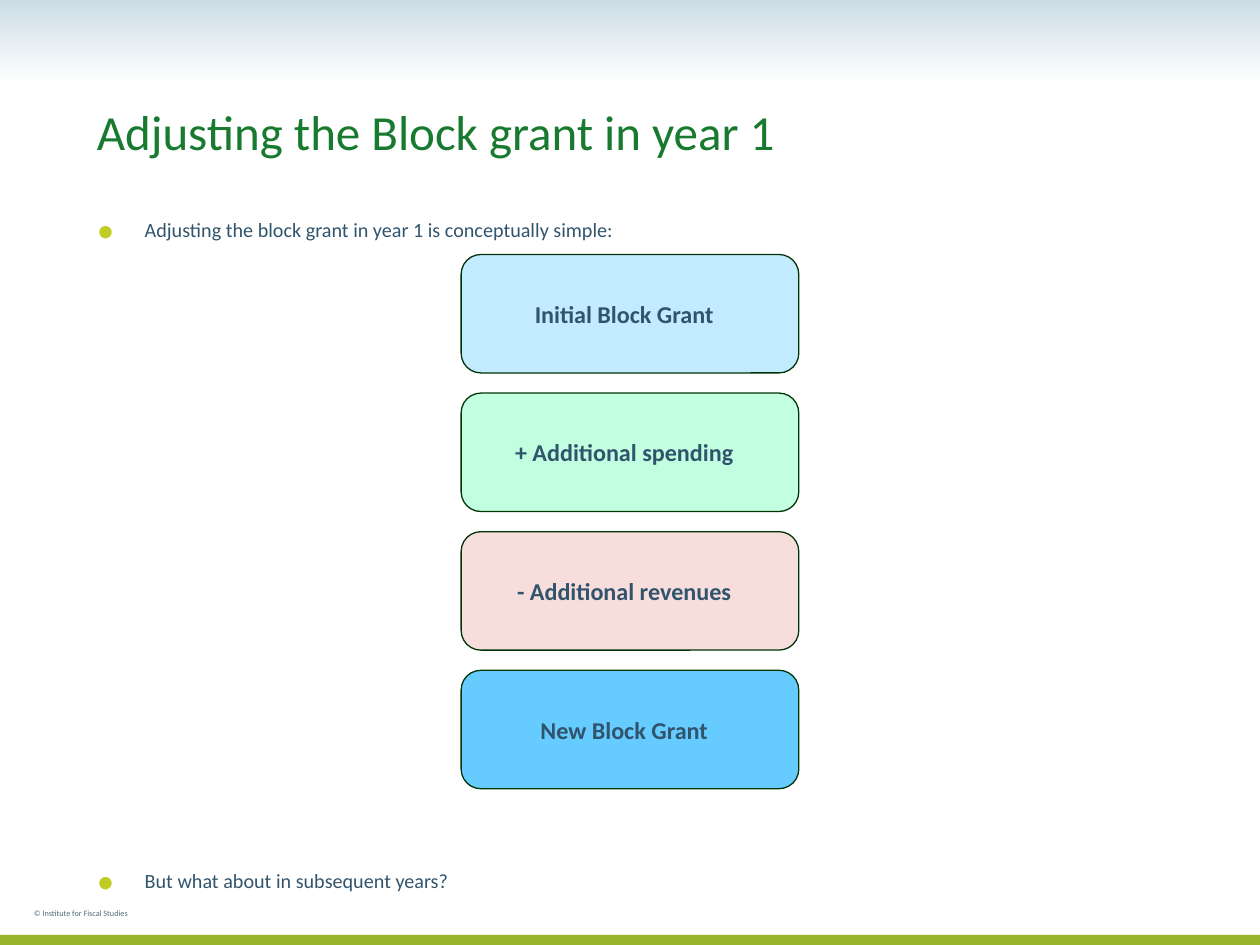
from pptx import Presentation
from pptx.dml.color import RGBColor
from pptx.enum.shapes import MSO_SHAPE
from pptx.enum.text import MSO_ANCHOR, PP_ALIGN
from pptx.oxml.ns import qn
from pptx.util import Inches, Pt
from lxml.etree import SubElement

FONT = "Calibri"
SLATE = "31546D"
BULLET = "BFCC22"


def colour(hex_value):
    return RGBColor.from_string(hex_value)


class SlideBuilder:
    def __init__(self, slide):
        self.slide = slide

    def style(self, paragraph, size, text_colour, bold=False):
        for run in paragraph.runs:
            run.font.name = FONT
            run.font.size = Pt(size)
            run.font.bold = bold
            run.font.color.rgb = colour(text_colour)

    def band(self, top, height):
        band = self.slide.shapes.add_shape(
            MSO_SHAPE.RECTANGLE, 0, Inches(top), Inches(10), Inches(height))
        band.shadow.inherit = False
        band.line.fill.background()
        return band

    def solid_band(self, top, height, fill):
        band = self.band(top, height)
        band.fill.solid()
        band.fill.fore_color.rgb = colour(fill)

    def gradient_band(self, top, height, start, end):
        fill = self.band(top, height).fill
        fill.gradient()
        fill.gradient_angle = 270
        for stop, position, shade in zip(fill.gradient_stops, (0, 1), (start, end)):
            stop.position = position
            stop.color.rgb = colour(shade)

    def text(self, box, wording, size, text_colour, margin_top=0.05,
             anchor=MSO_ANCHOR.TOP, line_spacing=1.0):
        frame = self.slide.shapes.add_textbox(*map(Inches, box)).text_frame
        frame.word_wrap = True
        frame.margin_top = Inches(margin_top)
        frame.vertical_anchor = anchor
        frame.text = wording
        for paragraph in frame.paragraphs:
            paragraph.line_spacing = line_spacing
            self.style(paragraph, size, text_colour)
        return frame

    def bullets(self, box, points, size, gap):
        frame = self.text(box, "\n".join(points), size, SLATE,
                          margin_top=0.24, line_spacing=0.95)
        for index, paragraph in enumerate(frame.paragraphs):
            if index:
                paragraph.space_before = Pt(gap)
            properties = paragraph._p.get_or_add_pPr()
            properties.set("marL", str(Inches(0.38)))
            properties.set("indent", str(-Inches(0.38)))
            shade = SubElement(properties, qn("a:buClr"))
            SubElement(shade, qn("a:srgbClr"), val=BULLET)
            SubElement(properties, qn("a:buSzPct"), val="174000")
            SubElement(properties, qn("a:buFont"), typeface=FONT)
            SubElement(properties, qn("a:buChar"), char="•")

    def card(self, top, label, fill):
        card = self.slide.shapes.add_shape(
            MSO_SHAPE.ROUNDED_RECTANGLE, Inches(3.66), Inches(top),
            Inches(2.68), Inches(0.94))
        card.shadow.inherit = False
        card.fill.solid()
        card.fill.fore_color.rgb = colour(fill)
        card.line.color.rgb = colour("003306")
        card.line.width = Pt(0.75)
        frame = card.text_frame
        frame.margin_right = Inches(0.19)
        frame.vertical_anchor = MSO_ANCHOR.MIDDLE
        frame.text = label
        paragraph = frame.paragraphs[0]
        paragraph.alignment = PP_ALIGN.CENTER
        self.style(paragraph, 13.8, SLATE, bold=True)


def main():
    presentation = Presentation()
    presentation.slide_width = Inches(10)
    presentation.slide_height = Inches(7.5)
    builder = SlideBuilder(presentation.slides.add_slide(presentation.slide_layouts[6]))

    builder.gradient_band(0, 0.67, "CCDDE6", "FFFFFF")
    builder.solid_band(7.42, 0.08, "97B32C")
    builder.text((0.67, 0.25, 8.58, 1.08), "Adjusting the Block grant in year 1",
                 28, "187A2E", anchor=MSO_ANCHOR.BOTTOM, line_spacing=0.9)
    builder.bullets((0.67, 1.5, 8.58, 5.42),
                    ["Adjusting the block grant in year 1 is conceptually simple:",
                     "But what about in subsequent years?"], 11.5, 359)
    builder.text((0.17, 7.08, 2.75, 0.25), "© Institute for Fiscal Studies",
                 4.7, "526D7F", margin_top=0.13)

    grant_steps = [
        ("Initial Block Grant", "C2EBFF"),
        ("+ Additional spending", "C2FFE0"),
        ("- Additional revenues", "F8DDDD"),
        ("New Block Grant", "66CCFF"),
    ]
    for row, (label, fill) in enumerate(grant_steps):
        builder.card(2.02 + row * 1.1, label, fill)

    presentation.save("out.pptx")


if __name__ == "__main__":
    main()
